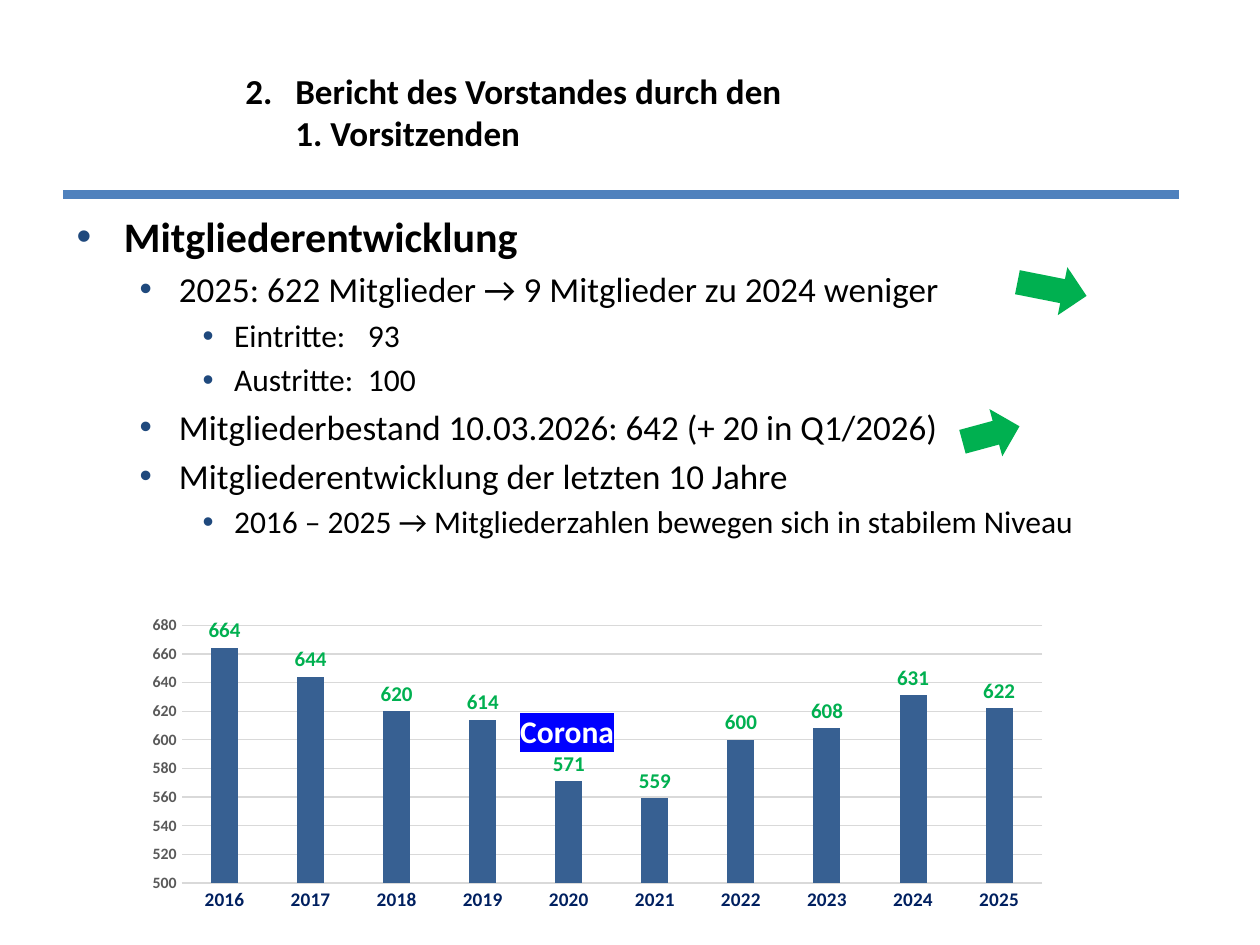
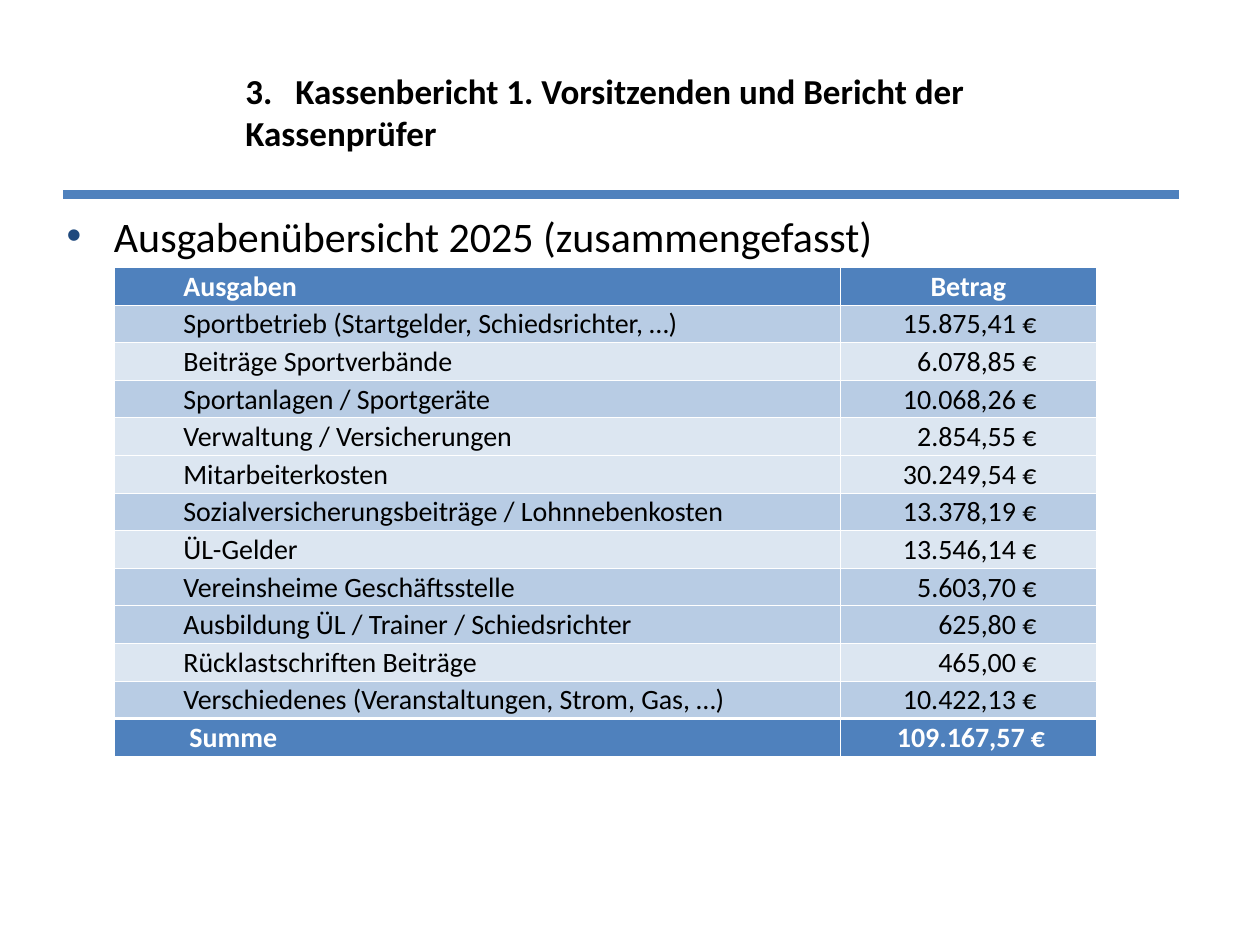
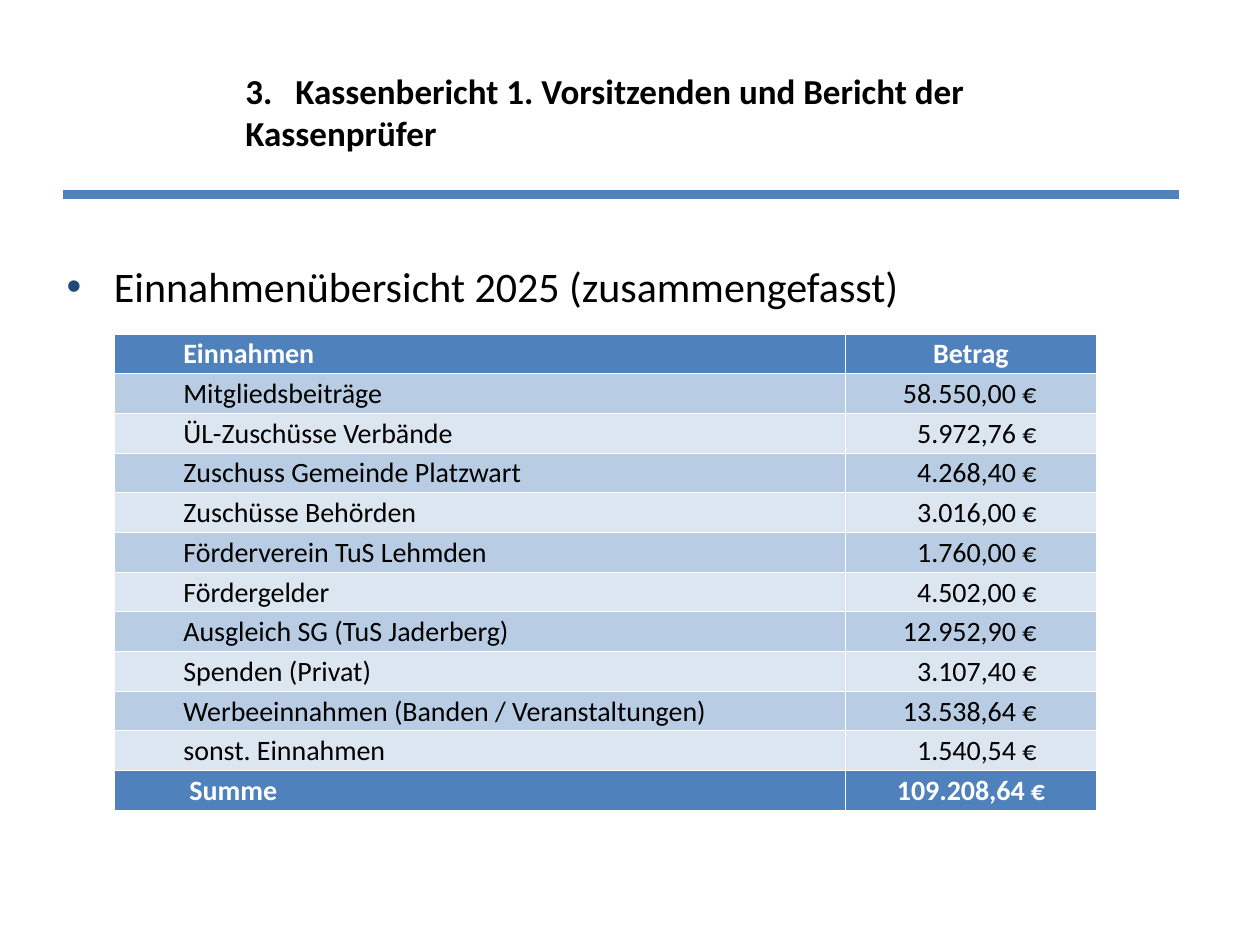
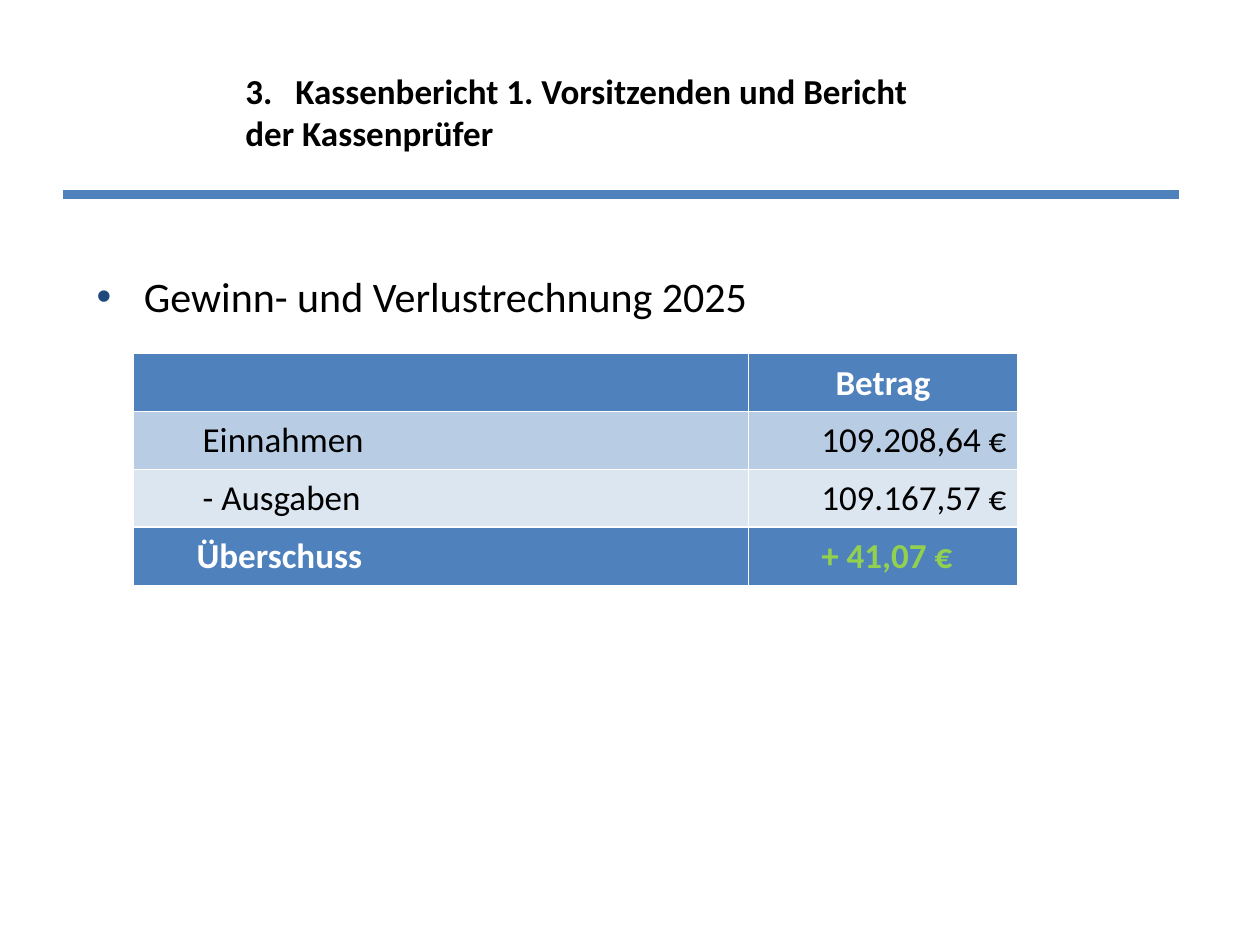
from collections import namedtuple

from lxml import etree
from pptx import Presentation
from pptx import util as u
from pptx.chart import data as chart_data
from pptx.dml.color import RGBColor
from pptx.enum import chart as charts, shapes, text
from pptx.oxml import ns

BLUE = RGBColor(0x4F, 0x81, 0xBD)
BAND_DARK = RGBColor(0xB8, 0xCC, 0xE4)
BAND_LIGHT = RGBColor(0xDC, 0xE6, 0xF1)
BULLET = RGBColor(0x1F, 0x49, 0x7D)
COLUMN = RGBColor(0x37, 0x60, 0x92)
NAVY = RGBColor(0x00, 0x20, 0x60)
GREEN = RGBColor(0x00, 0xB0, 0x50)
LIME = RGBColor(0x92, 0xD0, 0x50)
HIGHLIGHT = RGBColor(0x00, 0x00, 0xFF)
GRID = RGBColor(0xD9, 0xD9, 0xD9)
GREY = RGBColor(0x59, 0x59, 0x59)
BLACK = RGBColor(0, 0, 0)
WHITE = RGBColor(0xFF, 0xFF, 0xFF)
FONT = "Calibri"

Box = namedtuple("Box", "left top width height")
TITLE_BOX = Box(133.2, 21.6, 448, 84.2)

# Bullet levels: text indent, hanging indent, text size
LEVELS = [(27, 27, 24), (58.5, 22.5, 20), (90, 18, 18)]
COUNT_TAB = 166.5

CASH_TITLE = "3.\tKassenbericht 1. Vorsitzenden und Bericht der\vKassenprüfer"

MEMBER_POINTS = [
    (0, "Mitgliederentwicklung"),
    (1, "2025: 622 Mitglieder → 9 Mitglieder zu 2024 weniger"),
    (2, "Eintritte:\t93"),
    (2, "Austritte:\t100"),
    (1, "Mitgliederbestand 10.03.2026: 642 (+ 20 in Q1/2026)"),
    (1, "Mitgliederentwicklung der letzten 10 Jahre"),
    (2, "2016 – 2025 → Mitgliederzahlen bewegen sich in stabilem Niveau"),
]
MEMBERS = [664, 644, 620, 614, 571, 559, 600, 608, 631, 622]

EXPENSES = [
    ("Ausgaben", "Betrag"),
    ("Sportbetrieb (Startgelder, Schiedsrichter, …)", "15.875,41 €"),
    ("Beiträge Sportverbände", "6.078,85 €"),
    ("Sportanlagen / Sportgeräte", "10.068,26 €"),
    ("Verwaltung / Versicherungen", "2.854,55 €"),
    ("Mitarbeiterkosten", "30.249,54 €"),
    ("Sozialversicherungsbeiträge / Lohnnebenkosten", "13.378,19 €"),
    ("ÜL-Gelder", "13.546,14 €"),
    ("Vereinsheime Geschäftsstelle", "5.603,70 €"),
    ("Ausbildung ÜL / Trainer / Schiedsrichter", "625,80 €"),
    ("Rücklastschriften Beiträge", "465,00 €"),
    ("Verschiedenes (Veranstaltungen, Strom, Gas, …)", "10.422,13 €"),
    ("Summe", "109.167,57 €"),
]
INCOME = [
    ("Einnahmen", "Betrag"),
    ("Mitgliedsbeiträge", "58.550,00 €"),
    ("ÜL-Zuschüsse Verbände", "5.972,76 €"),
    ("Zuschuss Gemeinde Platzwart", "4.268,40 €"),
    ("Zuschüsse Behörden", "3.016,00 €"),
    ("Förderverein TuS Lehmden", "1.760,00 €"),
    ("Fördergelder", "4.502,00 €"),
    ("Ausgleich SG (TuS Jaderberg)", "12.952,90 €"),
    ("Spenden (Privat)", "3.107,40 €"),
    ("Werbeeinnahmen (Banden / Veranstaltungen)", "13.538,64 €"),
    ("sonst. Einnahmen", "1.540,54 €"),
    ("Summe", "109.208,64 €"),
]
RESULT = [
    ("", "Betrag"),
    ("Einnahmen", "109.208,64 €"),
    ("- Ausgaben", "109.167,57 €"),
    ("Überschuss", "+ 41,07 €"),
]


def in_points(box):
    return [u.Pt(length) for length in box]


def add_xml(parent, tag, **attributes):
    values = {name: str(value) for name, value in attributes.items()}
    return etree.SubElement(parent, ns.qn(tag), values)


def add_tab(para, position):
    tabs = add_xml(para._p.get_or_add_pPr(), "a:tabLst")
    add_xml(tabs, "a:tab", pos=u.Pt(position), algn="l")


def style_font(font, size, color, bold=False):
    font.name = FONT
    font.size = u.Pt(size)
    font.bold = bold
    font.color.rgb = color


def style_runs(para, size, color, bold=False):
    for span in para.runs:
        style_font(span.font, size, color, bold)


def add_text_frame(page, box):
    frame = page.shapes.add_textbox(*in_points(box)).text_frame
    frame.word_wrap = True
    return frame


def add_page(deck, title):
    """Page with the title and the blue rule below it."""
    page = deck.slides.add_slide(deck.slide_layouts[6])
    rule = page.shapes.add_connector(
        shapes.MSO_CONNECTOR.STRAIGHT, *in_points((36, 111.3, 674, 111.3)))
    rule.line.color.rgb = BLUE
    rule.line.width = u.Pt(5)
    add_xml(rule._element.spPr, "a:effectLst")

    frame = add_text_frame(page, TITLE_BOX)
    frame.vertical_anchor = text.MSO_ANCHOR.MIDDLE
    frame.text = title
    para = frame.paragraphs[0]
    add_tab(para, 28.5)
    style_runs(para, 20, BLACK, bold=True)
    return page


def add_bullets(page, box, points, bold_heading=False):
    frame = add_text_frame(page, box)
    frame.text = "\n".join(words for _, words in points)
    for index, (para, (level, words)) in enumerate(zip(frame.paragraphs, points)):
        indent, hanging, size = LEVELS[level]
        para.level = level
        properties = para._p.get_or_add_pPr()
        properties.set("marL", str(u.Pt(indent)))
        properties.set("indent", str(-u.Pt(hanging)))
        add_xml(add_xml(properties, "a:buClr"), "a:srgbClr", val=BULLET)
        add_xml(properties, "a:buFont", typeface="Arial")
        add_xml(properties, "a:buChar", char="•")
        if "\t" in words:
            add_tab(para, COUNT_TAB)
        if index:
            para.space_before = u.Pt(size * 0.2)
        style_runs(para, size, BLACK, bold=bold_heading and level == 0)


def add_trend_arrow(page, box, angle):
    arrow = page.shapes.add_shape(shapes.MSO_SHAPE.RIGHT_ARROW, *in_points(box))
    arrow.rotation = angle
    arrow.shadow.inherit = False
    arrow.fill.solid()
    arrow.fill.fore_color.rgb = GREEN
    arrow.line.fill.background()


def add_member_chart(page, box):
    data = chart_data.CategoryChartData()
    data.categories = [str(year) for year in range(2016, 2026)]
    data.add_series("Mitglieder", MEMBERS)
    chart = page.shapes.add_chart(
        charts.XL_CHART_TYPE.COLUMN_CLUSTERED, *in_points(box), data).chart
    chart.has_title = False
    chart.has_legend = False
    style_font(chart.font, 10, BLACK)

    # Columns and their labels
    plot = chart.plots[0]
    plot.gap_width = 219
    plot.overlap = -27
    plot.vary_by_categories = False
    fill = plot.series[0].format.fill
    fill.solid()
    fill.fore_color.rgb = COLUMN
    plot.has_data_labels = True
    labels = plot.data_labels
    labels.show_value = True
    labels.position = charts.XL_LABEL_POSITION.OUTSIDE_END
    style_font(labels.font, 12, GREEN, bold=True)

    # Axes
    years, counts = chart.category_axis, chart.value_axis
    for axis, size, color in ((years, 11, NAVY), (counts, 9, GREY)):
        axis.major_tick_mark = charts.XL_TICK_MARK.NONE
        axis.minor_tick_mark = charts.XL_TICK_MARK.NONE
        style_font(axis.tick_labels.font, size, color, bold=True)
    counts.minimum_scale = 500
    counts.maximum_scale = 680
    counts.major_unit = 20
    counts.format.line.fill.background()
    for line in (years.format.line, counts.major_gridlines.format.line):
        line.color.rgb = GRID
        line.width = u.Pt(0.75)

    # Inner plot area as fractions of the chart
    area = chart._chartSpace.chart.plotArea
    for old in area.findall(ns.qn("c:layout")):
        area.remove(old)
    layout = etree.Element(ns.qn("c:layout"))
    area.insert(0, layout)
    manual = add_xml(layout, "c:manualLayout")
    for tag, value in (("layoutTarget", "inner"), ("xMode", "edge"), ("yMode", "edge"),
                       ("x", 0.07), ("y", 0.23), ("w", 0.9), ("h", 0.66)):
        add_xml(manual, f"c:{tag}", val=value)


def add_highlight_label(page, box, words):
    frame = add_text_frame(page, box)
    frame.text = words
    para = frame.paragraphs[0]
    style_runs(para, 18, WHITE, bold=True)
    color = para.runs[0]._r.rPr.find(ns.qn("a:solidFill"))
    highlight = etree.Element(ns.qn("a:highlight"))
    add_xml(highlight, "a:srgbClr", val=HIGHLIGHT)
    color.addnext(highlight)


def set_borders(cell, top, bottom):
    properties = cell._tc.get_or_add_tcPr()
    for side, width in (("L", 0.5), ("R", 0.5), ("T", top), ("B", bottom)):
        line = add_xml(properties, f"a:ln{side}", w=u.Pt(width))
        add_xml(add_xml(line, "a:solidFill"), "a:srgbClr", val=WHITE)


def add_money_table(page, box, rows, amount_width, dark_rows, size=16, sum_rule=1.5,
                    amount_margin=34, sum_indent=43, sum_margin=29, sum_color=WHITE):
    """Table of items and amounts with a header row and a total row."""
    last = len(rows) - 1
    table = page.shapes.add_table(len(rows), 2, *in_points(box)).table
    table.columns[0].width = u.Pt(box.width - amount_width)
    table.columns[1].width = u.Pt(amount_width)
    for index, row in enumerate(rows):
        table.rows[index].height = u.Pt(box.height / len(rows))
        strong = index in (0, last)
        band = BLUE if strong else BAND_DARK if index in dark_rows else BAND_LIGHT
        for column, words in enumerate(row):
            cell = table.cell(index, column)
            set_borders(cell, top=sum_rule if index == last else 0.5,
                        bottom=sum_rule if index == last - 1 else 0.5)
            cell.fill.solid()
            cell.fill.fore_color.rgb = band
            cell.vertical_anchor = text.MSO_ANCHOR.MIDDLE
            cell.margin_left = cell.margin_right = u.Pt(0.7)
            cell.margin_top, cell.margin_bottom = u.Pt(0.7), 0
            cell.text = words
            para = cell.text_frame.paragraphs[0]
            color = WHITE if strong else BLACK
            if column == 0:
                cell.margin_left = u.Pt(sum_indent if index == last else 39.5)
            elif index == 0:
                para.alignment = text.PP_ALIGN.CENTER
            else:
                para.alignment = text.PP_ALIGN.RIGHT
                cell.margin_right = u.Pt(sum_margin if index == last else amount_margin)
                color = sum_color if index == last else color
            style_runs(para, size, color, bold=strong)


def build_members(deck):
    page = add_page(deck, "2.\tBericht des Vorstandes durch den\v\t1. Vorsitzenden")
    add_bullets(page, Box(36.7, 116.8, 648, 393), MEMBER_POINTS, bold_heading=True)
    add_trend_arrow(page, Box(581, 151.2, 40.3, 28), 11.2)
    add_trend_arrow(page, Box(549.4, 234, 33.8, 28), 344.8)
    add_member_chart(page, Box(65.5, 306, 546.5, 223.2))
    add_highlight_label(page, Box(290.2, 403.2, 72, 28.8), "Corona")


def build_expenses(deck):
    page = add_page(deck, CASH_TITLE)
    add_bullets(page, Box(31, 116.6, 652, 34),
                [(0, "Ausgabenübersicht 2025 (zusammengefasst)")])
    add_money_table(page, Box(65.3, 152.8, 561, 279.5), EXPENSES, 146,
                    dark_rows={1, 3, 6, 8, 9, 11})


def build_income(deck):
    page = add_page(deck, CASH_TITLE)
    add_bullets(page, Box(31, 145.4, 652, 30),
                [(0, "Einnahmenübersicht 2025 (zusammengefasst)")])
    add_money_table(page, Box(65.3, 190.8, 561, 272.4), INCOME, 143,
                    dark_rows=range(1, 11, 2), sum_rule=0.5)


def build_result(deck):
    page = add_page(
        deck, "3.\tKassenbericht 1. Vorsitzenden und Bericht\vder Kassenprüfer")
    add_bullets(page, Box(48.2, 151.2, 390, 36),
                [(0, "Gewinn- und Verlustrechnung 2025")])
    add_money_table(page, Box(76.3, 202, 505, 132.5), RESULT, 153.4, dark_rows={1},
                    size=20, amount_margin=6, sum_indent=36, sum_margin=37,
                    sum_color=LIME)


def main():
    deck = Presentation()
    deck.slide_width, deck.slide_height = u.Pt(720), u.Pt(540)
    for build in (build_members, build_expenses, build_income, build_result):
        build(deck)
    deck.save("out.pptx")


if __name__ == "__main__":
    main()
